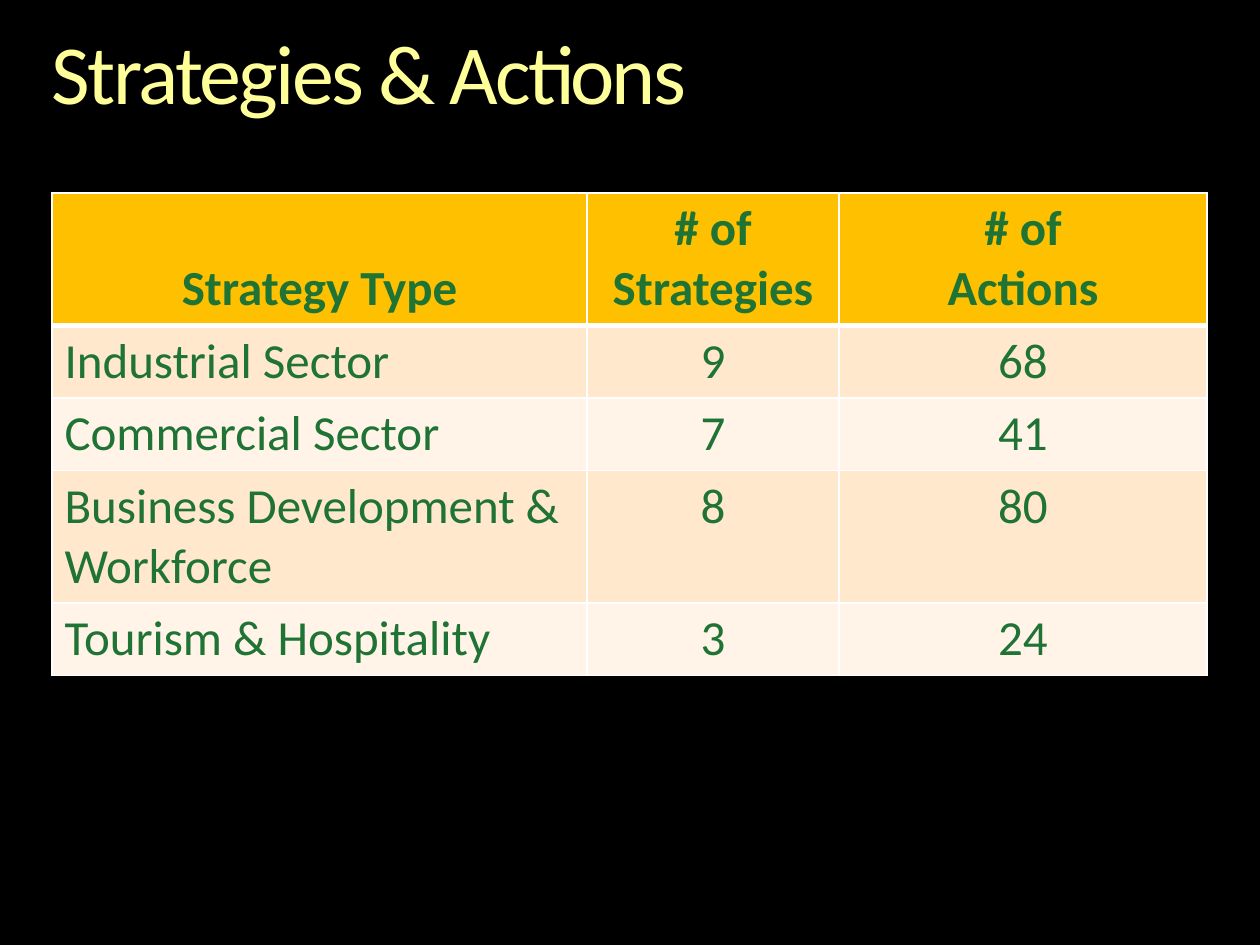
import dataclasses

import pptx
import pptx.dml.color
import pptx.enum.text
import pptx.oxml
import pptx.oxml.ns
import pptx.util

PX_PER_INCH = 126
CENTER = pptx.enum.text.PP_ALIGN.CENTER
LEFT = pptx.enum.text.PP_ALIGN.LEFT
ANCHOR = pptx.enum.text.MSO_ANCHOR


@dataclasses.dataclass(frozen=True)
class Theme:
    font: str = "Calibri"
    title_size: int = 48
    table_size: int = 28
    background: str = "000000"
    title: str = "FFFF99"
    text: str = "1F7335"
    header: str = "FFC000"
    bands: tuple = ("FFE8CC", "FFF4E7")
    border: str = "FFFFFF"


THEME = Theme()
HEADER = ("Strategy Type", "# of Strategies", "# of\nActions")
STRATEGY_ROWS = (
    ("Industrial Sector", "9", "68"),
    ("Commercial Sector", "7", "41"),
    ("Business Development & Workforce", "8", "80"),
    ("Tourism & Hospitality", "3", "24"),
)
COLUMN_WIDTHS = (535, 252, 368)
ROW_HEIGHTS = (132, 72, 72, 132, 72)


def px(length):
    return pptx.util.Emu(round(length * 914400 / PX_PER_INCH))


def rgb(value):
    return pptx.dml.color.RGBColor.from_string(value)


def style_font(font, size, color, bold=False):
    font.name = THEME.font
    font.size = pptx.util.Pt(size)
    font.bold = bold
    font.color.rgb = rgb(color)


def add_title(page, text):
    title = page.shapes.title
    title.left, title.top, title.width, title.height = map(px, (52, 32, 1155, 92))
    frame = title.text_frame
    frame.margin_left = frame.margin_top = frame.margin_right = frame.margin_bottom = 0
    frame.vertical_anchor = ANCHOR.TOP
    frame.word_wrap = True
    frame.auto_size = pptx.enum.text.MSO_AUTO_SIZE.NONE
    frame.text = text
    para = frame.paragraphs[0]
    para.alignment = LEFT
    para.line_spacing = 0.9
    style_font(para.font, THEME.title_size, THEME.title)
    para.runs[0].font._element.set("spc", "-150")


def set_borders(cell, bottom_width, top_width):
    """Draw the four cell edges, which must precede the fill in the XML."""
    properties = cell._tc.get_or_add_tcPr()
    edges = (("lnL", 1), ("lnR", 1), ("lnT", top_width), ("lnB", bottom_width))
    for position, (edge, width) in enumerate(edges):
        properties.insert(position, pptx.oxml.parse_xml(
            f'<a:{edge} {pptx.oxml.ns.nsdecls("a")} w="{pptx.util.Pt(width)}">'
            f'<a:solidFill><a:srgbClr val="{THEME.border}"/></a:solidFill></a:{edge}>'))


def fill_cell(cell, text, row, column):
    is_header = row == 0
    cell.text = text
    cell.vertical_anchor = ANCHOR.BOTTOM if is_header else ANCHOR.TOP
    cell.fill.solid()
    cell.fill.fore_color.rgb = rgb(THEME.header if is_header else THEME.bands[(row - 1) % 2])
    for para in cell.text_frame.paragraphs:
        para.alignment = CENTER if is_header or column > 0 else LEFT
        style_font(para.font, THEME.table_size, THEME.text, is_header)
    set_borders(cell, bottom_width=3 if is_header else 1, top_width=3 if row == 1 else 1)


def add_strategy_table(page):
    rows = (HEADER, *STRATEGY_ROWS)
    frame = page.shapes.add_table(
        len(rows), len(HEADER), px(52), px(193),
        px(sum(COLUMN_WIDTHS)), px(sum(ROW_HEIGHTS)))
    table = frame.table
    for column, width in zip(table.columns, COLUMN_WIDTHS):
        column.width = px(width)
    for row, height in zip(table.rows, ROW_HEIGHTS):
        row.height = px(height)
    for row, texts in enumerate(rows):
        for column, text in enumerate(texts):
            fill_cell(table.cell(row, column), text, row, column)


def main():
    deck = pptx.Presentation()
    deck.slide_width, deck.slide_height = px(1260), px(945)
    page = deck.slides.add_slide(deck.slide_layouts.get_by_name("Title Only"))
    page.background.fill.solid()
    page.background.fill.fore_color.rgb = rgb(THEME.background)
    add_title(page, "Strategies & Actions")
    add_strategy_table(page)
    deck.save("out.pptx")


if __name__ == "__main__":
    main()
